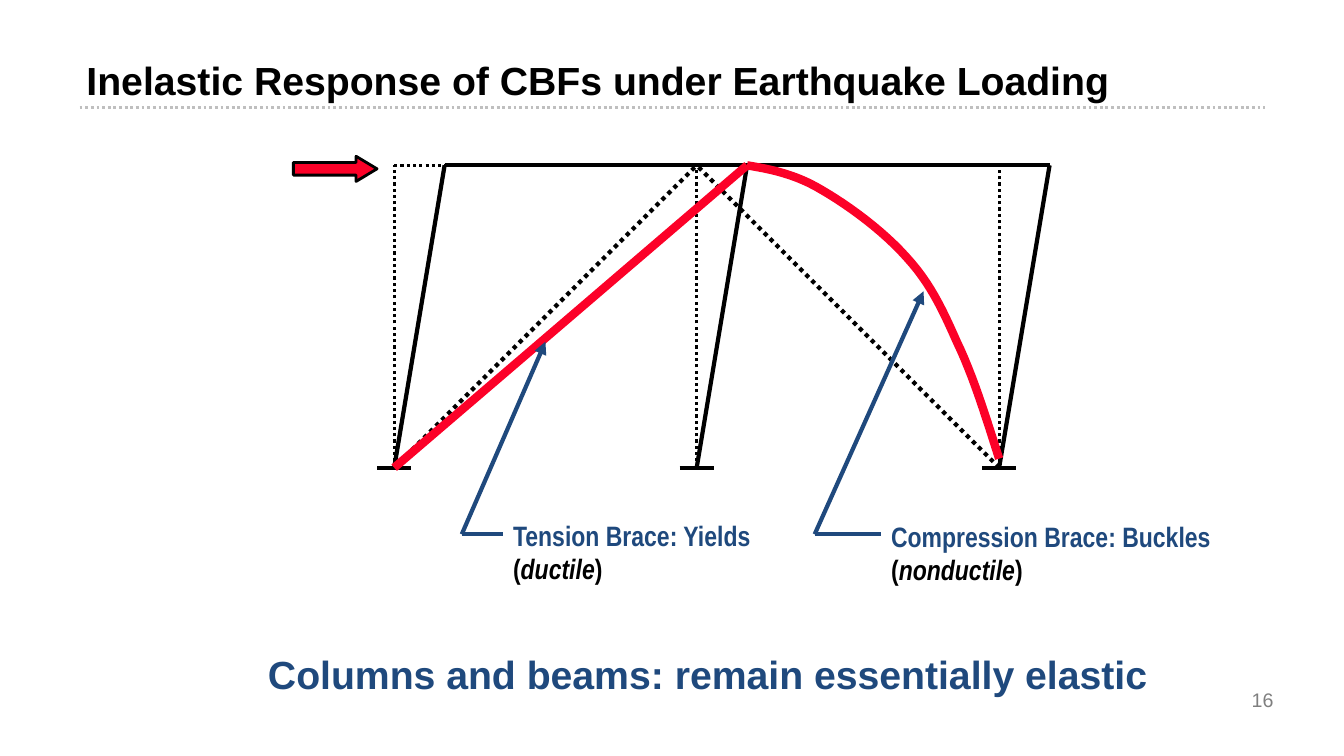
import pptx
import pptx.util
import pptx.dml.color
import pptx.enum.dml
import pptx.enum.shapes
import pptx.enum.text
import pptx.oxml.ns
from lxml import etree

Inches = pptx.util.Inches
BLACK, RED, NAVY = "000000", "FC0128", "1F497D"
TOP, BASE, SWAY = 1.64, 4.64, 0.5
COLUMNS = (3.91, 6.91, 9.91)
DOTS = pptx.enum.dml.MSO_LINE.ROUND_DOT


def color(value):
    return pptx.dml.color.RGBColor.from_string(value)


def write(para, text, font="Arial", size=28, fill=NAVY, bold=True, italic=False):
    span = para.add_run()
    span.text = text
    span.font.name = font
    span.font.size = pptx.util.Pt(size)
    span.font.color.rgb = color(fill)
    span.font.bold = bold
    span.font.italic = italic


def bezier(start, first, second, end, steps=12):
    for step in range(1, steps + 1):
        t = step / steps
        weights = ((1 - t) ** 3, 3 * t * (1 - t) ** 2, 3 * t * t * (1 - t), t ** 3)
        knots = (start, first, second, end)
        yield tuple(sum(w * knot[axis] for w, knot in zip(weights, knots)) for axis in (0, 1))


class Sketch:
    """Draws styled elements on the current slide."""

    def __init__(self, page):
        self.page = page

    def stroke(self, line, fill, width, dash=None):
        line.color.rgb = color(fill)
        line.width = pptx.util.Pt(width)
        if dash is not None:
            line.dash_style = dash

    def line(self, start, end, fill=BLACK, width=3, dash=None, arrow=False):
        link = self.page.shapes.add_connector(
            pptx.enum.shapes.MSO_CONNECTOR.STRAIGHT, *map(Inches, start + end))
        self.stroke(link.line, fill, width, dash)
        if arrow:
            etree.SubElement(link.line._get_or_add_ln(), pptx.oxml.ns.qn("a:tailEnd"), type="triangle")
        etree.SubElement(link._element.spPr, pptx.oxml.ns.qn("a:effectLst"))

    def arrow(self, left, top, width, height):
        block = self.page.shapes.add_shape(
            pptx.enum.shapes.MSO_SHAPE.RIGHT_ARROW, *map(Inches, (left, top, width, height)))
        block.adjustments[0], block.adjustments[1] = 0.5, 0.83
        block.shadow.inherit = False
        block.fill.solid()
        block.fill.fore_color.rgb = color(RED)
        self.stroke(block.line, BLACK, 2)

    def curve(self, points, fill, width):
        points = [tuple(map(Inches, point)) for point in points]
        builder = self.page.shapes.build_freeform(*points[0])
        builder.add_line_segments(points[1:], close=False)
        shape = builder.convert_to_shape()
        shape.shadow.inherit = False
        shape.fill.background()
        self.stroke(shape.line, fill, width)

    def text(self, left, top, width, height):
        box = self.page.shapes.add_textbox(*map(Inches, (left, top, width, height)))
        box.text_frame.word_wrap = True
        return box.text_frame

    def label(self, place, title, kind):
        para = self.text(*place).paragraphs[0]
        style = {"font": "Arial Narrow", "size": 20}
        write(para, title, **style)
        para.add_line_break()
        write(para, "(", fill=BLACK, **style)
        write(para, kind, fill=BLACK, italic=True, **style)
        write(para, ")", fill=BLACK, **style)

    def leader(self, tip, elbow, end):
        self.line(elbow, tip, NAVY, arrow=True)
        self.line(elbow, end, NAVY)


def main():
    deck = pptx.Presentation()
    deck.slide_width, deck.slide_height = Inches(13.33), Inches(7.5)
    sketch = Sketch(deck.slides.add_slide(deck.slide_layouts[6]))
    left, middle, right = COLUMNS

    sketch.line((0.79, 1.07), (12.55, 1.07), "BFBFBF", 2, DOTS)
    title = sketch.text(0.76, 0.51, 11.97, 0.64)
    write(title.paragraphs[0], "Inelastic Response of CBFs under Earthquake Loading", fill=BLACK)
    number = sketch.text(9.62, 6.74, 3.11, 0.4)
    number.vertical_anchor = pptx.enum.text.MSO_ANCHOR.MIDDLE
    number.paragraphs[0].alignment = pptx.enum.text.PP_ALIGN.RIGHT
    write(number.paragraphs[0], "16", size=14, fill="7F7F7F", bold=False)

    for column in COLUMNS:
        sketch.line((column, BASE), (column, TOP), width=2.25, dash=DOTS)
        sketch.line((column - 0.17, BASE), (column + 0.17, BASE))
    for start, end in ((left, middle), (middle, right)):
        sketch.line((start, TOP), (end, TOP), width=2.25, dash=DOTS)
    for foot in (left, right):
        sketch.line((foot, BASE), (middle, TOP), dash=DOTS)

    sketch.arrow(2.91, 1.55, 0.83, 0.25)
    sketch.line((left + SWAY, TOP), (right + SWAY, TOP))
    for column in COLUMNS:
        sketch.line((column, BASE), (column + SWAY, TOP))

    crown = (middle + SWAY, TOP)
    sketch.line((left, BASE), crown, RED, 6)
    buckled = [crown]
    for first, second, end in (
        ((7.65, 1.68), (7.9, 1.73), (8.16, 1.89)),
        ((8.42, 2.04), (8.77, 2.3), (8.99, 2.55)),
        ((9.22, 2.8), (9.34, 3.05), (9.49, 3.39)),
        ((9.65, 3.72), (9.78, 4.14), (9.91, 4.55)),
    ):
        buckled.extend(bezier(buckled[-1], first, second, end))
    sketch.curve(buckled, RED, 6)

    sketch.label((4.99, 5.09, 2.67, 0.77), "Tension Brace: Yields", "ductile")
    sketch.leader((5.41, 3.39), (4.58, 5.3), (4.99, 5.3))
    sketch.label((8.74, 5.1, 3.67, 0.77), "Compression Brace: Buckles", "nonductile")
    sketch.leader((9.16, 2.89), (8.08, 5.3), (8.74, 5.3))
    summary = sketch.text(2.56, 6.4, 9.03, 0.57)
    write(summary.paragraphs[0], "Columns and beams: remain essentially elastic")

    deck.save("out.pptx")


if __name__ == "__main__":
    main()
